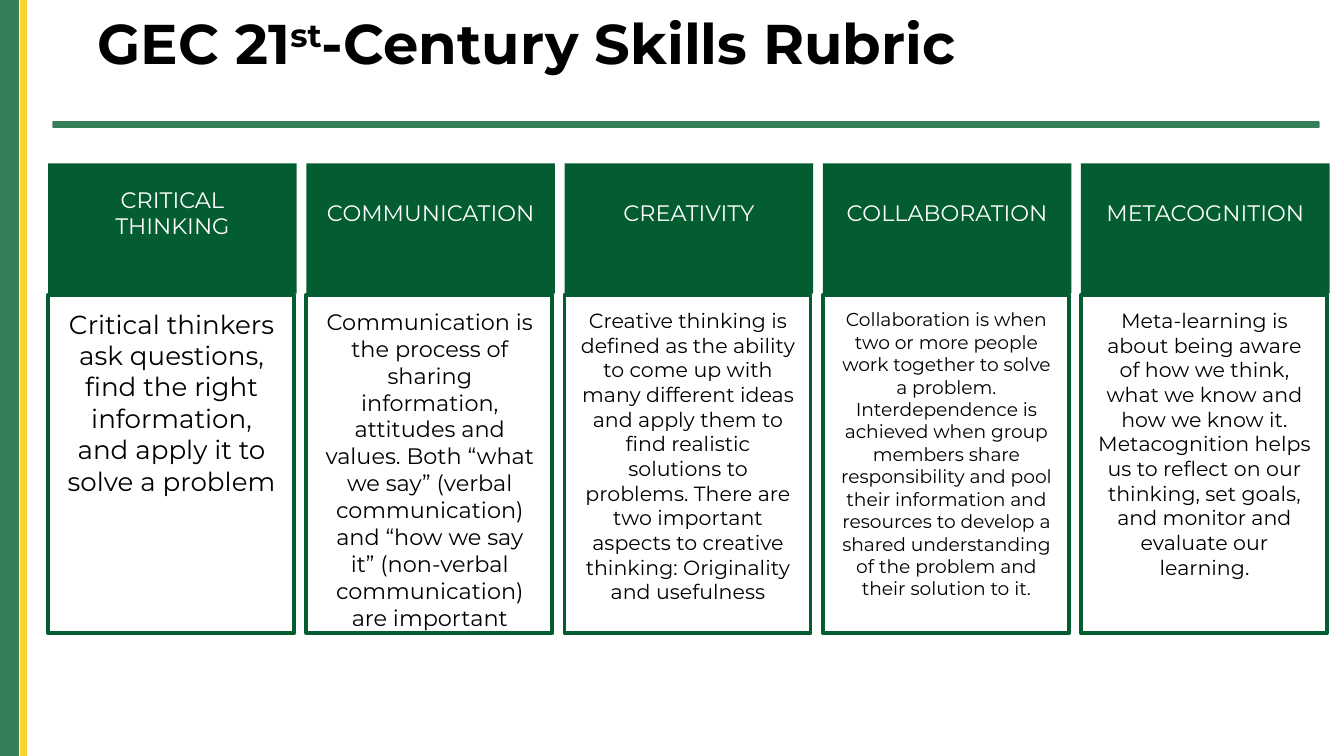
"""Build the skills rubric slide: a title over five columns of definitions."""
from pptx import Presentation
from pptx.dml.color import RGBColor
from pptx.enum.shapes import MSO_SHAPE
from pptx.enum.text import MSO_ANCHOR, PP_ALIGN
from pptx.util import Cm, Pt

FONT = "Montserrat"
WIDE, HIGH = 25.4, 14.29
COLORS = {"dark": "035D30", "green": "367E58", "gold": "F9D32E",
          "black": "000000", "white": "FFFFFF"}

TITLE = [("GEC 21", 0), ("st", 30000), ("-Century Skills Rubric", 0)]
BARS = [(0, 0.3, "green"), (0.28, 0.08, "green"), (0.38, 0.13, "gold")]
SKILLS = [
    ("CRITICAL THINKING", 14,
     "Critical thinkers ask questions, find the right information, "
     "and apply it to solve a problem"),
    ("COMMUNICATION", 12,
     "Communication is the process of sharing information, attitudes and "
     "values. Both “what we say” (verbal communication) and “how we say it” "
     "(non-verbal communication) are important"),
    ("CREATIVITY", 11,
     "Creative thinking is defined as the ability to come up with many "
     "different ideas and apply them to find realistic solutions to problems. "
     "There are two important aspects to creative thinking: Originality and "
     "usefulness"),
    ("COLLABORATION", 10,
     "Collaboration is when two or more people work together to solve a "
     "problem. Interdependence is achieved when group members share "
     "responsibility and pool their information and resources to develop a "
     "shared understanding of the problem and their solution to it."),
    ("METACOGNITION", 11,
     "Meta-learning is about being aware of how we think, what we know and "
     "how we know it. Metacognition helps us to reflect on our thinking, set "
     "goals, and monitor and evaluate our learning."),
]
LEFT, STEP, TOP = 0.91, 4.88, 3.09


def color(name):
    return RGBColor.from_string(COLORS[name])


def style(font, size, name, bold=False):
    font.name, font.size, font.bold = FONT, Pt(size), bold
    font.color.rgb = color(name)


def block(slide, box, fill=None, kind=MSO_SHAPE.RECTANGLE):
    shape = slide.shapes.add_shape(kind, *map(Cm, box))
    shape.shadow.inherit = False
    if fill:
        shape.fill.solid()
        shape.fill.fore_color.rgb = color(fill)
        shape.line.fill.background()
    else:
        shape.fill.background()
        shape.line.color.rgb = color("dark")
        shape.line.width = Pt(2)
    return shape


def write(shape, text, size, name):
    frame = shape.text_frame
    frame.word_wrap = True
    frame.text = text
    para = frame.paragraphs[0]
    para.alignment = PP_ALIGN.CENTER
    style(para.runs[0].font, size, name)
    return frame


def title(slide):
    box = slide.shapes.add_textbox(Cm(1.04), Cm(0.2), Cm(24.03), Cm(1.73))
    frame = box.text_frame
    frame.word_wrap = True
    frame.margin_left, frame.margin_right = Cm(0.81), Cm(0.18)
    frame.margin_top = frame.margin_bottom = Cm(0.1)
    para = frame.paragraphs[0]
    para.line_spacing = 0.9
    for text, base in TITLE:
        run = para.add_run()
        run.text = text
        style(run.font, 30, "black", True)
        if base:
            run._r.get_or_add_rPr().set("baseline", str(base))


def column(slide, left, head, size, body):
    top = block(slide, (left, TOP, 4.7, 2.46), "dark")
    frame = write(top, head, 12, "white")
    frame.vertical_anchor = MSO_ANCHOR.MIDDLE
    frame.margin_bottom = Cm(0.73)
    block(slide, (left, TOP + 2.48, 4.65, 6.4))
    box = slide.shapes.add_textbox(
        Cm(left + 0.05), Cm(TOP + 2.61), Cm(4.57), Cm(6))
    write(box, body, size, "black")


def main():
    deck = Presentation()
    deck.slide_width, deck.slide_height = Cm(WIDE), Cm(HIGH)
    slide = deck.slides.add_slide(deck.slide_layouts[6])
    for left, width, name in BARS:
        block(slide, (left, 0, width, HIGH), name)
    rule = block(slide, (0.99, 2.29, 23.95, 0.13), "green",
                 MSO_SHAPE.ROUNDED_RECTANGLE)
    rule.adjustments[0] = 0.17
    title(slide)
    for i, skill in enumerate(SKILLS):
        column(slide, LEFT + i * STEP, *skill)
    deck.save("out.pptx")


if __name__ == "__main__":
    main()
